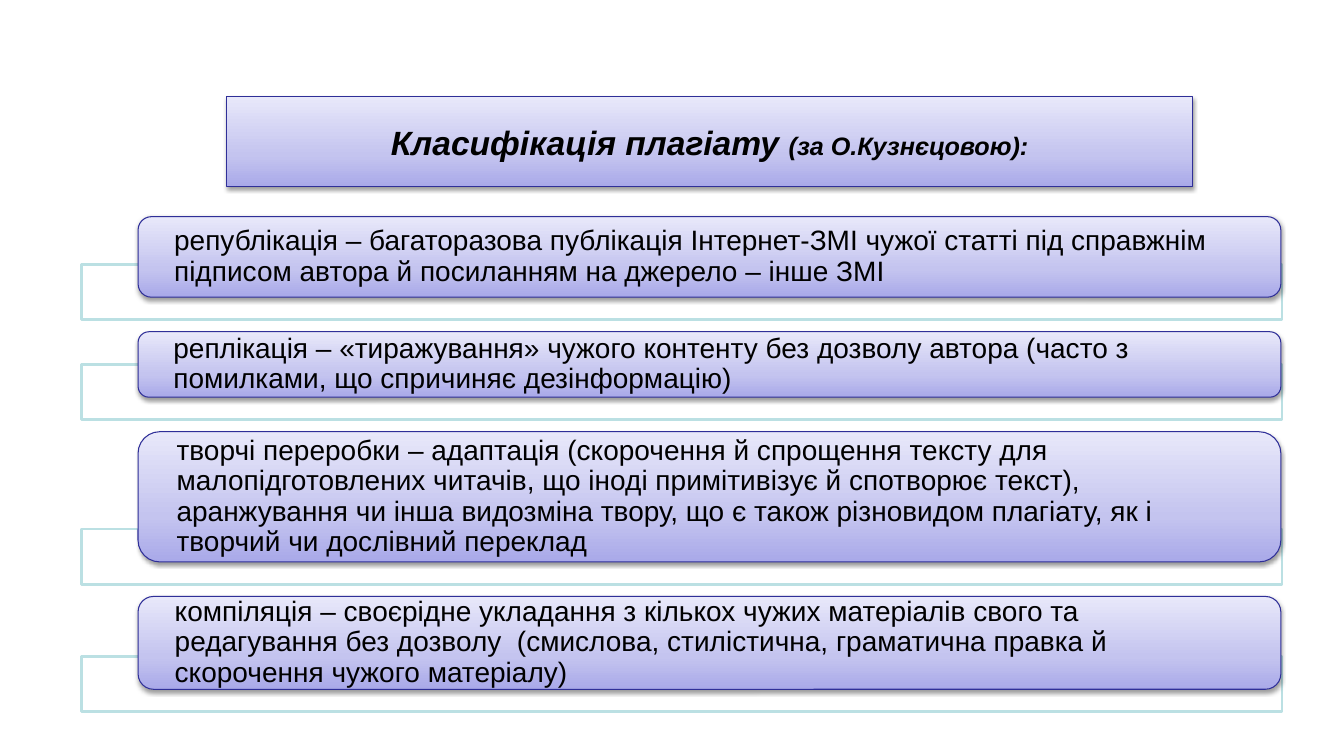
from copy import deepcopy
from dataclasses import dataclass

from lxml import etree
from pptx import Presentation
from pptx.dml.color import RGBColor
from pptx.enum.shapes import MSO_SHAPE
from pptx.enum.text import MSO_ANCHOR, MSO_AUTO_SIZE, PP_ALIGN
from pptx.oxml.ns import qn
from pptx.util import Cm, Pt

RECT, ROUNDED = MSO_SHAPE.RECTANGLE, MSO_SHAPE.ROUNDED_RECTANGLE
MIDDLE, LEFT, CENTER = MSO_ANCHOR.MIDDLE, PP_ALIGN.LEFT, PP_ALIGN.CENTER
NO_FIT = MSO_AUTO_SIZE.NONE
TITLE_ONLY = 5

# Content: title runs with their role, then cards as (height in cm, text)
TITLE = [("Класифікація плагіату ", "title"), ("(за О.Кузнєцовою):", "source")]
CARDS = [
    (2.03, "републікація – багаторазова публікація Інтернет-ЗМІ чужої статті під "
           "справжнім підписом автора й посиланням на джерело – інше ЗМІ"),
    (1.65, "реплікація – «тиражування» чужого контенту без дозволу автора (часто з "
           "помилками, що спричиняє дезінформацію)"),
    (3.28, "творчі переробки – адаптація (скорочення й спрощення тексту для "
           "малопідготовлених читачів, що іноді примітивізує й спотворює текст), "
           "аранжування чи інша видозміна твору, що є також різновидом плагіату, "
           "як і творчий чи дослівний переклад"),
    (2.34, "компіляція – своєрідне укладання з кількох чужих матеріалів свого та "
           "редагування без дозволу  (смислова, стилістична, граматична правка й "
           "скорочення чужого матеріалу)"),
]


@dataclass(frozen=True)
class Theme:
    font: str = "Arial"
    title: int = 24
    source: int = 18
    body: int = 20
    text: str = "000000"
    white: str = "FFFFFF"
    outline: str = "2F2F98"
    frame: str = "BBE0E3"
    gradient: tuple = ((0, "A9A9E9"), (0.35, "C4C4EF"), (1, "E8E8FA"))


THEME = Theme()

# Layout in cm
TITLE_BOX = (5.72, 2.44, 24.33, 2.26)
FRAME_X, FRAME_W, FRAME_H = 2.06, 30.25, 1.4
CARD_X, CARD_W, CARD_TOP = 3.48, 28.8, 5.46
FRAME_DROP, GAP, INSET = 0.57, 0.3, 0.81


def color(value):
    return RGBColor.from_string(value)


def add_alpha(parent, percent):
    alpha = etree.SubElement(parent, qn("a:alpha"))
    alpha.set("val", str(percent * 1000))


def style_panel(s):
    """Lilac gradient, dark thin outline and a soft shadow below."""
    s.fill.gradient()
    stops = s._element.spPr.find(".//" + qn("a:gsLst"))
    stops.append(deepcopy(stops[0]))
    for stop, (position, value) in zip(s.fill.gradient_stops, THEME.gradient):
        stop.position = position
        stop.color.rgb = color(value)
    s.fill.gradient_angle = 90
    s.line.color.rgb = color(THEME.outline)
    s.line.width = Pt(0.75)
    s.shadow.inherit = False
    effects = s._element.spPr.find(qn("a:effectLst"))
    shadow = etree.SubElement(effects, qn("a:outerShdw"), blurRad=str(Pt(3.1)),
                              dist=str(Pt(1.6)), dir="5400000", rotWithShape="0")
    black = etree.SubElement(shadow, qn("a:srgbClr"), val="000000")
    add_alpha(black, 38)


def style_run(r, size):
    r.font.name = THEME.font
    r.font.size = Pt(size)
    r.font.color.rgb = color(THEME.text)


def add_title(slide):
    s = slide.shapes.title
    s.left, s.top, s.width, s.height = map(Cm, TITLE_BOX)
    geometry = etree.SubElement(s._element.spPr, qn("a:prstGeom"), prst="round2DiagRect")
    guides = etree.SubElement(geometry, qn("a:avLst"))
    for name, value in (("adj1", 50000), ("adj2", 0)):
        etree.SubElement(guides, qn("a:gd"), name=name, fmla=f"val {value}")
    style_panel(s)
    tf = s.text_frame
    tf.auto_size, tf.vertical_anchor = NO_FIT, MIDDLE
    p = tf.paragraphs[0]
    p.alignment = CENTER
    for text, role in TITLE:
        r = p.add_run()
        r.text = text
        style_run(r, getattr(THEME, role))
        r.font.bold = r.font.italic = True


def add_frame(slide, top):
    s = slide.shapes.add_shape(RECT, Cm(FRAME_X), Cm(top), Cm(FRAME_W), Cm(FRAME_H))
    s.fill.solid()
    s.fill.fore_color.rgb = color(THEME.white)
    add_alpha(s._element.spPr.find(qn("a:solidFill"))[0], 90)
    s.line.color.rgb = color(THEME.frame)
    s.line.width = Pt(2)
    s.shadow.inherit = False


def add_card(slide, top, height, text):
    s = slide.shapes.add_shape(ROUNDED, Cm(CARD_X), Cm(top), Cm(CARD_W), Cm(height))
    style_panel(s)
    tf = s.text_frame
    tf.word_wrap, tf.vertical_anchor = True, MIDDLE
    tf.margin_left = tf.margin_right = Cm(INSET)
    tf.margin_top = tf.margin_bottom = 0
    tf.text = text
    p = tf.paragraphs[0]
    p.alignment, p.line_spacing = LEFT, 0.9
    style_run(p.runs[0], THEME.body)


def main():
    prs = Presentation()
    prs.slide_width, prs.slide_height = Cm(33.87), Cm(19.05)
    slide = prs.slides.add_slide(prs.slide_layouts[TITLE_ONLY])
    add_title(slide)

    # Each card overlaps the top of its frame; the next starts below the frame
    top = CARD_TOP
    for height, text in CARDS:
        frame_bottom = top + height + FRAME_DROP
        add_frame(slide, frame_bottom - FRAME_H)
        add_card(slide, top, height, text)
        top = frame_bottom + GAP

    prs.save("out.pptx")


if __name__ == "__main__":
    main()
